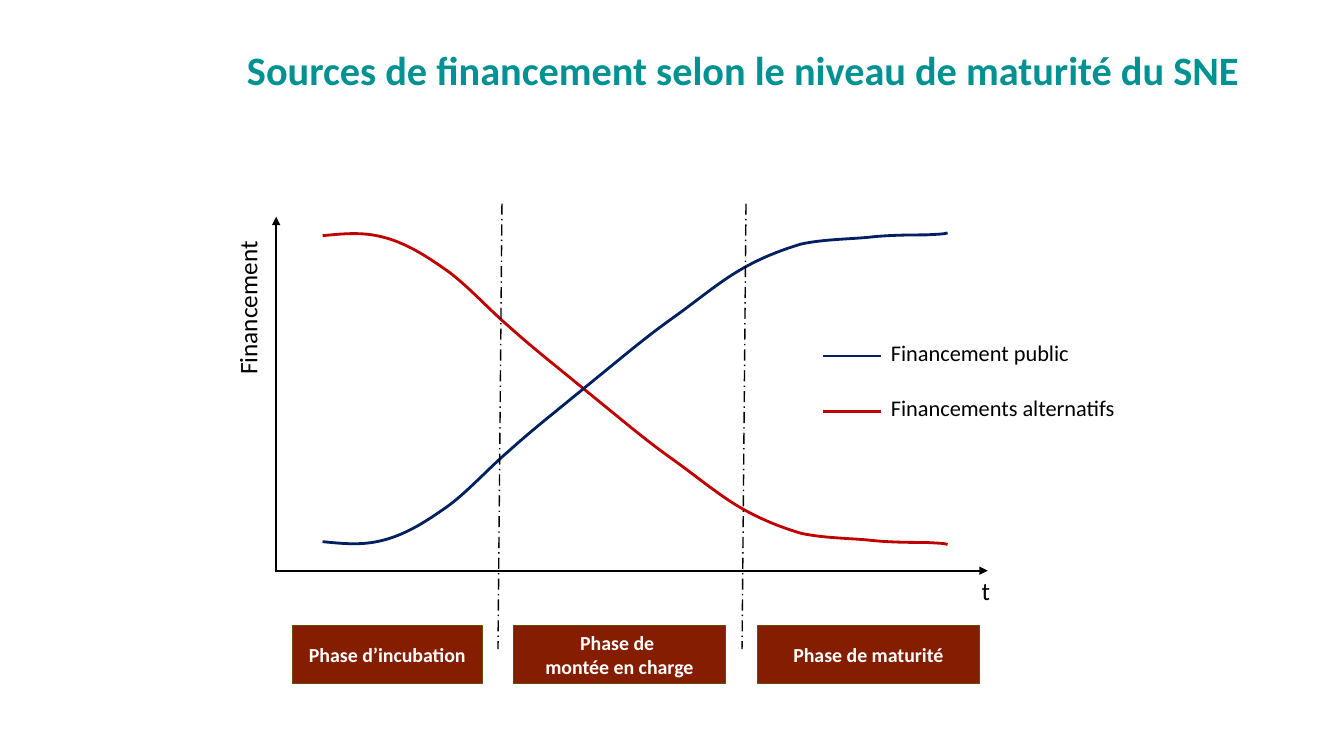
from dataclasses import dataclass

from lxml import etree
from pptx import Presentation
from pptx.dml.color import RGBColor
from pptx.enum.dml import MSO_LINE
from pptx.enum.shapes import MSO_CONNECTOR, MSO_SHAPE
from pptx.enum.text import MSO_ANCHOR, MSO_AUTO_SIZE, PP_ALIGN
from pptx.oxml.ns import qn
from pptx.util import Cm, Pt

STRAIGHT = MSO_CONNECTOR.STRAIGHT
RECTANGLE = MSO_SHAPE.RECTANGLE
DASH_DOT = MSO_LINE.LONG_DASH_DOT
MIDDLE = MSO_ANCHOR.MIDDLE
NO_FIT = MSO_AUTO_SIZE.NONE
LEFT, CENTER = PP_ALIGN.LEFT, PP_ALIGN.CENTER

BLACK = RGBColor(0x00, 0x00, 0x00)
WHITE = RGBColor(0xFF, 0xFF, 0xFF)
TEAL = RGBColor(0x00, 0x91, 0x93)
RED = RGBColor(0xC0, 0x00, 0x00)
NAVY = RGBColor(0x00, 0x20, 0x60)
BROWN = RGBColor(0x85, 0x1D, 0x00)
OLIVE = RGBColor(0x66, 0x4D, 0x00)

FONT = "Calibri"


@dataclass
class Phase:
    text: str
    left: float
    width: float


@dataclass
class Line:
    start: tuple[float, float]
    end: tuple[float, float]
    color: RGBColor = BLACK
    width: float = 1.5
    arrow: bool = False
    dashed: bool = False


@dataclass
class Label:
    lines: list[str]
    box: tuple[float, float, float, float]
    size: float
    rotation: int = 0


PHASES = [
    Phase("Phase d’incubation", 7.37, 4.78),
    Phase("Phase de \nmontée en charge", 12.93, 5.36),
    Phase("Phase de maturité", 19.08, 5.61),
]
AXES = [
    Line((6.96, 14.38), (6.96, 5.46), arrow=True),
    Line((6.93, 14.38), (24.89, 14.38), arrow=True),
]
DIVIDERS = [
    Line((x, 5.13), (x - 0.1, 16.36), width=1, dashed=True) for x in (12.65, 18.8)
]
LEGEND_KEYS = [
    Line((20.73, 10.36), (22.2, 10.36), RED, 2),
    Line((20.75, 8.97), (22.2, 8.97), NAVY, 2),
]
LABELS = [
    Label(["Financement public", "Financements alternatifs"],
          (22.2, 8.43, 7.26, 2.31), 16),
    Label(["Financement"], (3.94, 6.88, 4.6, 1.02), 18, 270),
    Label(["t"], (24.49, 14.38, 0.84, 1.02), 18),
]

# Falling curve in hundredths of a cm: a start, then three Bezier points a segment
FALLING = [
    (813, 594),
    (864, 589), (912, 584), (963, 597),
    (1016, 610), (1064, 638), (1118, 676),
    (1171, 711), (1234, 782), (1283, 823),
    (1328, 864), (1394, 917), (1394, 917),
    (1459, 970), (1525, 1024), (1590, 1077),
    (1641, 1118), (1661, 1133), (1707, 1166),
    (1753, 1199), (1811, 1247), (1864, 1278),
    (1915, 1308), (1966, 1328), (2019, 1344),
    (2075, 1356), (2136, 1356), (2189, 1361),
    (2240, 1367), (2301, 1367), (2334, 1367),
    (2367, 1369), (2380, 1369), (2388, 1372),
]
MIRROR = 1959  # sum of the heights of the two curves
RISING = [(x, MIRROR - y) for x, y in FALLING]


def write(p, text: str, size: float, color: RGBColor = BLACK, bold: bool = False) -> None:
    p.text = text
    values = {"name": FONT, "size": Pt(size), "bold": bold}
    for r in p.runs:
        for name, value in values.items():
            setattr(r.font, name, value)
        r.font.color.rgb = color


def add_line(shapes, line: Line) -> None:
    x1, y1, x2, y2 = (Cm(v) for v in line.start + line.end)
    s = shapes.add_connector(STRAIGHT, x1, y1, x2, y2)
    s.line.color.rgb = line.color
    s.line.width = Pt(line.width)
    if line.dashed:
        s.line.dash_style = DASH_DOT
    if line.arrow:
        etree.SubElement(s.line._get_or_add_ln(), qn("a:tailEnd"), type="triangle")
    etree.SubElement(s._element.spPr, qn("a:effectLst"))


def add_curve(shapes, points: list[tuple[int, int]], color: RGBColor) -> None:
    builder = shapes.build_freeform(*points[0], scale=Cm(0.01))
    builder.add_line_segments(points[1:], close=False)
    s = builder.convert_to_shape()
    s.shadow.inherit = False
    s.fill.background()
    s.line.color.rgb = color
    s.line.width = Pt(2)
    # Turn each run of three points into one cubic segment
    segments = list(s._element.iter(qn("a:lnTo")))
    outline = segments[0].getparent()
    for i in range(0, len(segments), 3):
        cubic = etree.SubElement(outline, qn("a:cubicBezTo"))
        for segment in segments[i:i + 3]:
            cubic.append(segment[0])
            outline.remove(segment)


def add_phase(shapes, phase: Phase) -> None:
    s = shapes.add_shape(RECTANGLE, Cm(phase.left), Cm(15.77), Cm(phase.width), Cm(1.45))
    s.shadow.inherit = False
    s.fill.solid()
    s.fill.fore_color.rgb = BROWN
    s.line.color.rgb = OLIVE
    s.line.width = Pt(0.5)
    tf = s.text_frame
    tf.word_wrap = True
    tf.vertical_anchor = MIDDLE
    p = tf.paragraphs[0]
    p.alignment = CENTER
    write(p, phase.text, 14.2, WHITE, True)


def add_label(shapes, label: Label) -> None:
    s = shapes.add_textbox(*(Cm(v) for v in label.box))
    s.rotation = label.rotation
    tf = s.text_frame
    tf.word_wrap = True
    for i, text in enumerate(label.lines):
        p = tf.add_paragraph() if i else tf.paragraphs[0]
        if i:
            p.space_before = Pt(19.5)
        write(p, text, label.size)


def set_title(title) -> None:
    title.left, title.top, title.width, title.height = (
        Cm(v) for v in (5.97, 0.61, 26.52, 2.26))
    tf = title.text_frame
    tf.auto_size = NO_FIT
    tf.vertical_anchor = MIDDLE
    p = tf.paragraphs[0]
    p.alignment = LEFT
    write(p, "Sources de financement selon le niveau de maturité du SNE", 28.8, TEAL, True)


def main() -> None:
    prs = Presentation()
    prs.slide_width, prs.slide_height = Cm(33.87), Cm(19.05)
    slide = prs.slides.add_slide(prs.slide_layouts[5])
    shapes = slide.shapes
    set_title(shapes.title)

    # Phases under the time axis
    for phase in PHASES:
        add_phase(shapes, phase)

    # Axes, funding curves and phase limits
    for axis in AXES:
        add_line(shapes, axis)
    add_curve(shapes, FALLING, RED)
    add_curve(shapes, RISING, NAVY)

    # Phase limits and legend keys
    for line in DIVIDERS + LEGEND_KEYS:
        add_line(shapes, line)

    # Legend and axis labels
    for label in LABELS:
        add_label(shapes, label)

    prs.save("out.pptx")


if __name__ == "__main__":
    main()
